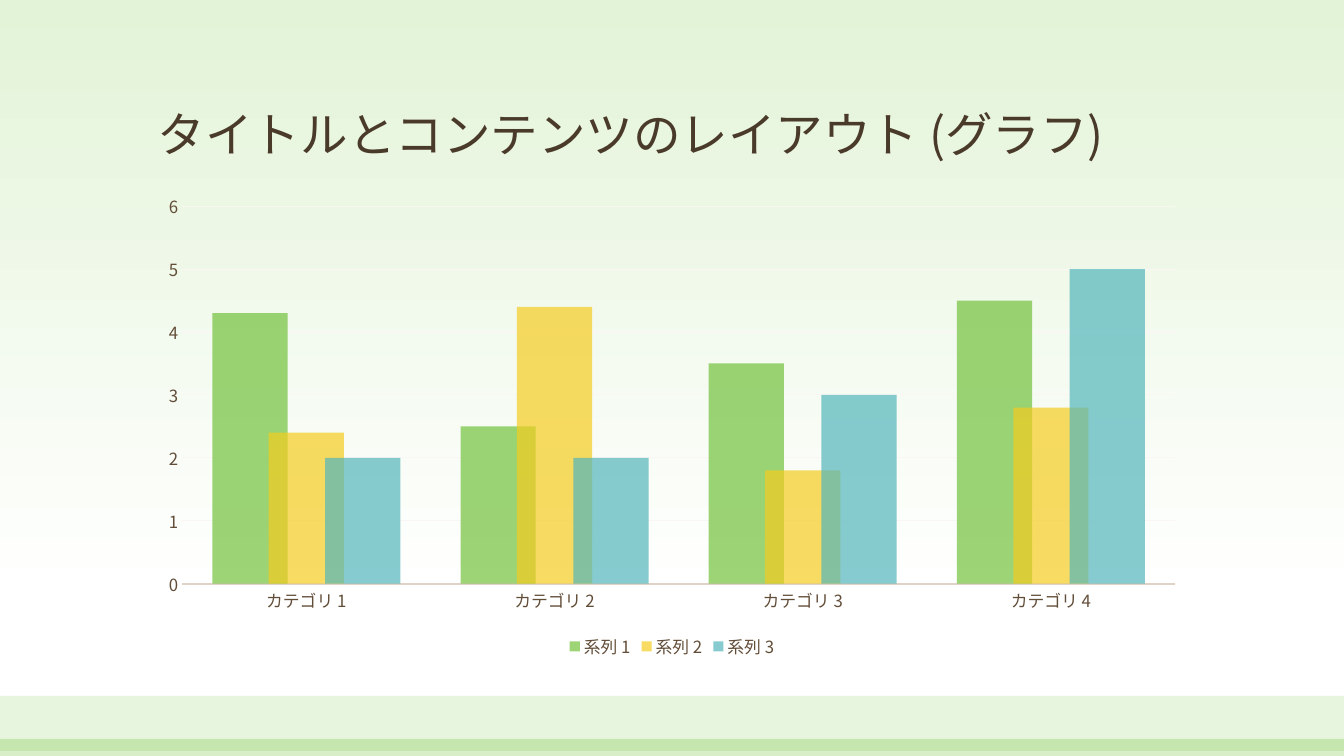
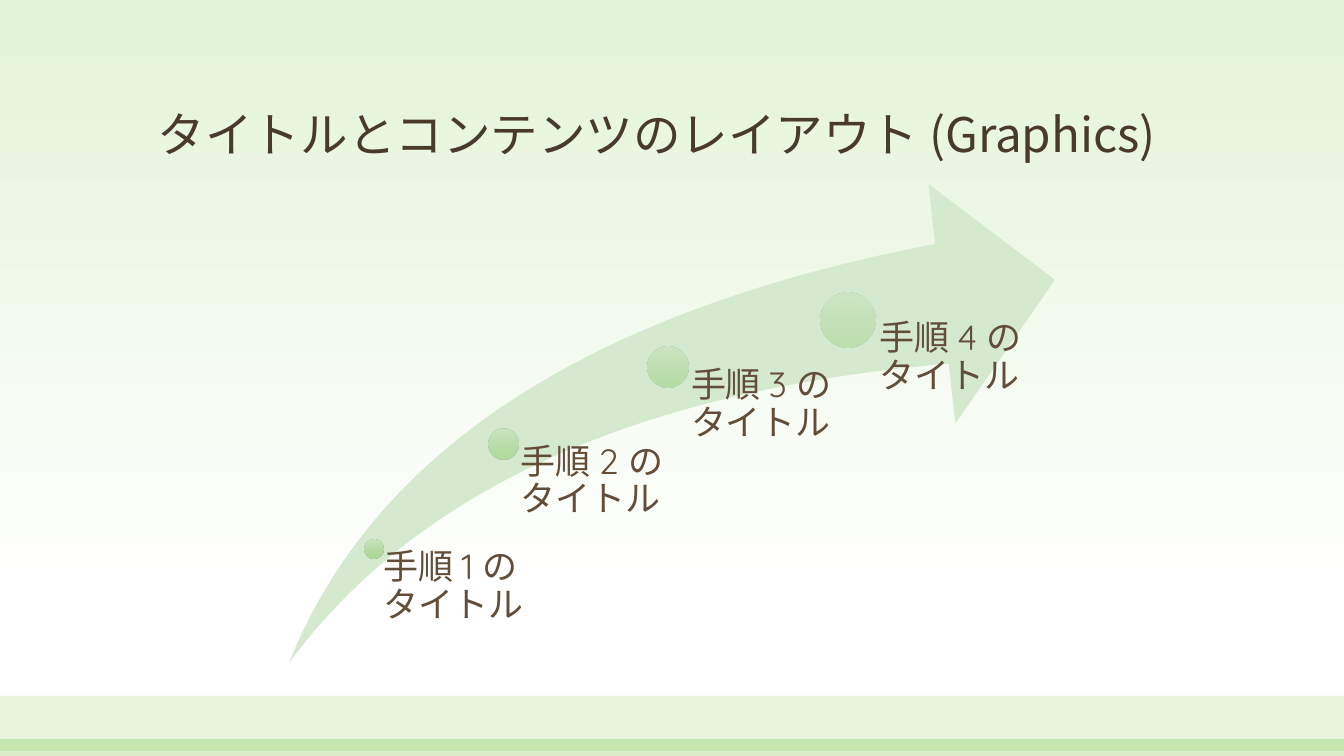
from lxml import etree
from pptx import Presentation
from pptx.chart.data import CategoryChartData
from pptx.dml.color import RGBColor
from pptx.enum import chart as ch, shapes, text
from pptx.oxml.ns import qn
from pptx.util import Emu, Pt

W, H = 1344, 756
SCALE = 914400 / 100.8
CJK, LATIN = "Noto Sans CJK JP", "Quicksand"
COLORS = {
    "title": "4A3A2A", "body": "624D38", "axis": "DFD2C6", "grid": "F9F6F4",
    "green": "72C23C", "yellow": "F4CC20", "teal": "53B6BB", "arrow": "D5E9CE",
    "sky": "E3F3D8", "white": "FFFFFF",
    "dot_top": "C8E5BC", "dot_mid": "B3DBA2", "dot_low": "A4D78D",
}
BANDS = [(696, 55, 17), (739, 17, 28)]
TITLE_BOX = (148, 48, 1048, 120)
CHART_BOX = (148, 184, 1048, 479)
ARROW_BOX = (289, 184, 766, 479)
TITLES = ["タイトルとコンテンツのレイアウト (グラフ)",
          "タイトルとコンテンツのレイアウト (Graphics)"]
CATEGORIES = ["カテゴリ 1", "カテゴリ 2", "カテゴリ 3", "カテゴリ 4"]
SERIES = [
    ("系列 1", (4.3, 2.5, 3.5, 4.5), "green"),
    ("系列 2", (2.4, 4.4, 1.8, 2.8), "yellow"),
    ("系列 3", (2, 2, 3, 5), "teal"),
]
STEPS = [
    ("手順 1 のタイトル", 374, 549, 18, 90, 157, 10),
    ("手順 2 のタイトル", 504, 444, 30, 77, 161, 17),
    ("手順 3 のタイトル", 668, 367, 40, 63, 173, 23),
    ("手順 4 のタイトル", 848, 320, 54, 50, 196, 32),
]


def px(n):
    return Emu(round(n * SCALE))


def box(*lengths):
    return [px(n) for n in lengths]


def rgb(name):
    return RGBColor.from_string(COLORS[name])


def set_alpha(color, percent):
    etree.SubElement(color, qn("a:alpha"), val=str(percent * 1000))


def solid(fill, element, name, opacity=100):
    fill.solid()
    fill.fore_color.rgb = rgb(name)
    if opacity < 100:
        set_alpha(next(element.iter(qn("a:srgbClr"))), opacity)


def gradient(fill, element, stops, opacity=100):
    fill.gradient()
    fill.gradient_angle = 270
    stop_list = next(element.iter(qn("a:gsLst")))
    for gs in list(stop_list):
        stop_list.remove(gs)
    for pos, name in stops:
        gs = etree.SubElement(stop_list, qn("a:gs"), pos=str(pos * 1000))
        color = etree.SubElement(gs, qn("a:srgbClr"), val=COLORS[name])
        if opacity < 100:
            set_alpha(color, opacity)


def add_shape(s, kind, bounds):
    sp = s.shapes.add_shape(kind, *box(*bounds))
    sp.shadow.inherit = False
    sp.line.fill.background()
    return sp


def add_text(s, content, bounds, size, color, font, **frame):
    tf = s.shapes.add_textbox(*box(*bounds)).text_frame
    for key, value in {"word_wrap": True, **frame}.items():
        setattr(tf, key, value)
    p = tf.paragraphs[0]
    p.line_spacing = 0.9
    r = p.add_run()
    r.text = content
    for key, value in {"size": Pt(size), "name": font}.items():
        setattr(r.font, key, value)
    r.font.color.rgb = rgb(color)
    add_east_asian(r.font._element)


def add_east_asian(element):
    for latin in list(element.iter(qn("a:latin"))):
        ea = etree.Element(qn("a:ea"), typeface=CJK)
        latin.addnext(ea)


def new_slide(prs, title):
    s = prs.slides.add_slide(prs.slide_layouts[6])
    gradient(s.background.fill, s.element, [(0, "sky"), (79, "white")])
    for top, height, opacity in BANDS:
        sp = add_shape(s, shapes.MSO_SHAPE.RECTANGLE, (0, top, W, height))
        solid(sp.fill, sp.element, "green", opacity)
    add_text(s, title, TITLE_BOX, 34, "title", CJK,
             vertical_anchor=text.MSO_ANCHOR.BOTTOM)
    return s


def add_column_chart(s):
    data = CategoryChartData()
    data.categories = CATEGORIES
    for name, values, _ in SERIES:
        data.add_series(name, values)
    chart = s.shapes.add_chart(ch.XL_CHART_TYPE.COLUMN_CLUSTERED,
                               *box(*CHART_BOX), data).chart
    chart.has_title = False
    chart.has_legend = True
    chart.legend.position = ch.XL_LEGEND_POSITION.BOTTOM
    chart.legend.include_in_layout = False
    for key, value in {"size": Pt(12), "name": CJK}.items():
        setattr(chart.font, key, value)
    chart.font.color.rgb = rgb("body")
    add_east_asian(chart.element)

    plot = chart.plots[0]
    for key, value in {"gap_width": 80, "overlap": 25,
                       "vary_by_categories": False}.items():
        setattr(plot, key, value)
    for series, (_, _, color) in zip(plot.series, SERIES):
        series.invert_if_negative = False
        solid(series.format.fill, series._element, color, 70)

    cat, val = chart.category_axis, chart.value_axis
    for axis in (cat, val):
        axis.major_tick_mark = axis.minor_tick_mark = ch.XL_TICK_MARK.NONE
    for key, value in {"minimum_scale": 0, "maximum_scale": 6, "major_unit": 1,
                       "has_major_gridlines": True}.items():
        setattr(val, key, value)
    val.format.line.fill.background()
    for line, color, width in [(cat.format.line, "axis", 1.25),
                               (val.major_gridlines.format.line, "grid", 0.75)]:
        line.color.rgb = rgb(color)
        line.width = Pt(width)


def add_steps(s):
    arrow = add_shape(s, shapes.MSO_SHAPE.SWOOSH_ARROW, ARROW_BOX)
    arrow.adjustments[0] = arrow.adjustments[1] = 0.25
    solid(arrow.fill, arrow.element, "arrow")
    bottom = ARROW_BOX[1] + ARROW_BOX[3]
    stops = [(0, "dot_top"), (50, "dot_mid"), (100, "dot_low")]
    for label, x, y, size, opacity, width, inset in STEPS:
        dot = add_shape(s, shapes.MSO_SHAPE.OVAL,
                        (x - size / 2, y - size / 2, size, size))
        gradient(dot.fill, dot.element, stops, opacity)
        add_text(s, label, (x, y, width, bottom - y), 25, "body", LATIN,
                 margin_left=px(inset), margin_top=0,
                 margin_right=0, margin_bottom=0)


def main():
    prs = Presentation()
    prs.slide_width, prs.slide_height = box(W, H)
    for title, draw in zip(TITLES, (add_column_chart, add_steps)):
        draw(new_slide(prs, title))
    prs.save("out.pptx")


if __name__ == "__main__":
    main()
